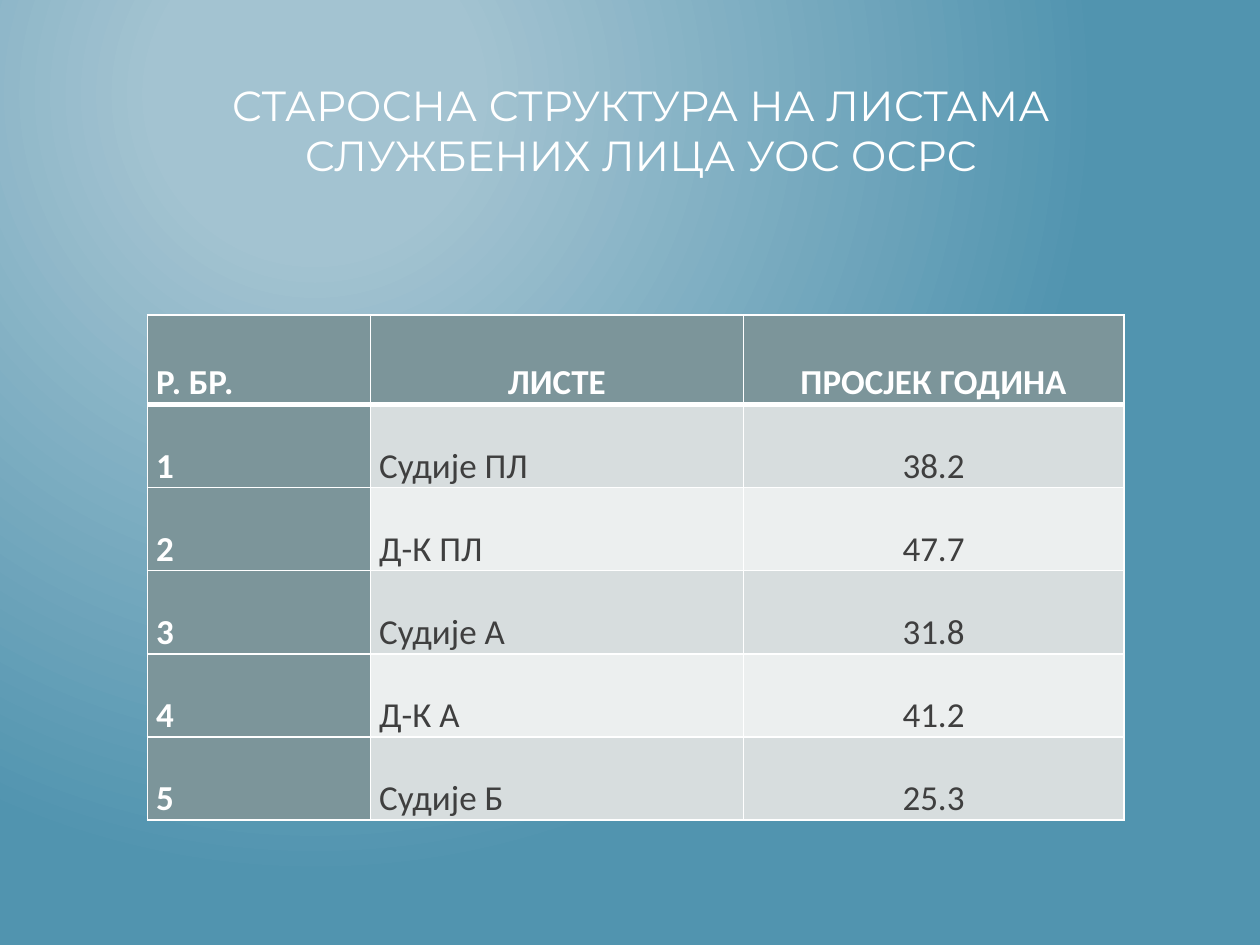
from dataclasses import dataclass

from lxml.etree import SubElement
from pptx import Presentation
from pptx.dml.color import RGBColor
from pptx.enum.text import MSO_ANCHOR, PP_ALIGN
from pptx.oxml.ns import qn
from pptx.util import Inches, Pt


@dataclass
class Theme:
    white: str = "FFFFFF"
    ink: str = "3F3F3F"
    head: str = "7C959A"
    bands: tuple = ("D7DDDE", "ECEFEF")
    glow: tuple = ((0.2, "A3C3D1"), (1, "5194AF"))
    title: tuple = ("Montserrat", 24)
    body: tuple = ("Calibri", 20)


def assign(target, values):
    for name, value in values.items():
        setattr(target, name, value)


class Deck:
    def __init__(self, theme):
        self.theme = theme
        self.show = Presentation()
        assign(self.show, {"slide_width": Inches(10), "slide_height": Inches(7.5)})
        self.slide = self.show.slides.add_slide(self.show.slide_layouts[0])
        subtitle = self.slide.placeholders[1].element
        subtitle.getparent().remove(subtitle)

    def backdrop(self):
        """Fill the background with a circular glow near the upper left."""
        fill = self.slide.background.fill
        fill.gradient()
        for stop, (place, color) in zip(fill.gradient_stops, self.theme.glow):
            stop.position = place
            stop.color.rgb = RGBColor.from_string(color)
        grad = self.slide.element.xpath(".//a:gradFill")[0]
        grad.remove(grad.find(qn("a:lin")))
        circle = SubElement(grad, qn("a:path"), path="circle")
        SubElement(circle, qn("a:fillToRect"), l="50000", t="20000", r="100000", b="100000")

    def label(self, frame, text, face, color, align, bold=False, space=1.0):
        frame.text = text
        para = frame.paragraphs[0]
        assign(para, {"alignment": align, "line_spacing": space})
        font = para.runs[0].font
        name, size = face
        assign(font, {"name": name, "size": Pt(size), "bold": bold})
        font.color.rgb = RGBColor.from_string(color)

    def title(self, text, left, top, width, height):
        shape = self.slide.shapes.title
        assign(shape, {"left": Inches(left), "top": Inches(top),
                       "width": Inches(width), "height": Inches(height)})
        frame = shape.text_frame
        assign(frame, {"word_wrap": True, "vertical_anchor": MSO_ANCHOR.TOP,
                       "margin_left": 0, "margin_right": 0,
                       "margin_top": Inches(0.05), "margin_bottom": Inches(0.05)})
        self.label(frame, text, self.theme.title, self.theme.white, PP_ALIGN.CENTER)

    def border(self, cell, row):
        """Draw thin white edges, with a thick rule below the header row."""
        props = cell._tc.get_or_add_tcPr()
        thick = {(0, "B"), (1, "T")}
        for side in "LRTB":
            width = Pt(3 if (row, side) in thick else 1)
            line = SubElement(props, qn(f"a:ln{side}"), w=str(width))
            solid = SubElement(line, qn("a:solidFill"))
            SubElement(solid, qn("a:srgbClr"), val=self.theme.white)

    def table(self, rows, left, top, widths, heights):
        theme = self.theme
        grid = self.slide.shapes.add_table(
            len(rows), len(widths), Inches(left), Inches(top),
            Inches(sum(widths)), Inches(sum(heights))).table
        for column, width in zip(grid.columns, widths):
            column.width = Inches(width)
        for line, height in zip(grid.rows, heights):
            line.height = Inches(height)
        grid.first_col = True
        for r, values in enumerate(rows):
            for c, text in enumerate(values):
                cell = grid.cell(r, c)
                head = r == 0 or c == 0
                center = c == 2 or (r == 0 and c == 1)
                assign(cell, {"vertical_anchor": MSO_ANCHOR.BOTTOM,
                              "margin_left": Inches(0.07), "margin_right": Inches(0.07),
                              "margin_top": 0, "margin_bottom": 0})
                self.border(cell, r)
                cell.fill.solid()
                color = theme.head if head else theme.bands[(r - 1) % 2]
                cell.fill.fore_color.rgb = RGBColor.from_string(color)
                self.label(cell.text_frame, text, theme.body,
                           theme.white if head else theme.ink,
                           PP_ALIGN.CENTER if center else PP_ALIGN.LEFT,
                           bold=head, space=1.15)


def main():
    deck = Deck(Theme())
    deck.backdrop()
    deck.title("СТАРОСНА СТРУКТУРА НА ЛИСТАМА СЛУЖБЕНИХ ЛИЦА УОС ОСРС",
               1, 0.58, 8.17, 1.25)
    ages = [("Судије ПЛ", "38.2"), ("Д-К ПЛ", "47.7"), ("Судије А", "31.8"),
            ("Д-К А", "41.2"), ("Судије Б", "25.3")]
    rows = [("Р. БР.", "ЛИСТЕ", "ПРОСЈЕК ГОДИНА")]
    rows += [(str(n), *pair) for n, pair in enumerate(ages, 1)]
    deck.table(rows, 1.17, 2.5, (1.77, 2.96, 3.02), [0.71] + [0.66] * len(ages))
    deck.show.save("out.pptx")


if __name__ == "__main__":
    main()
